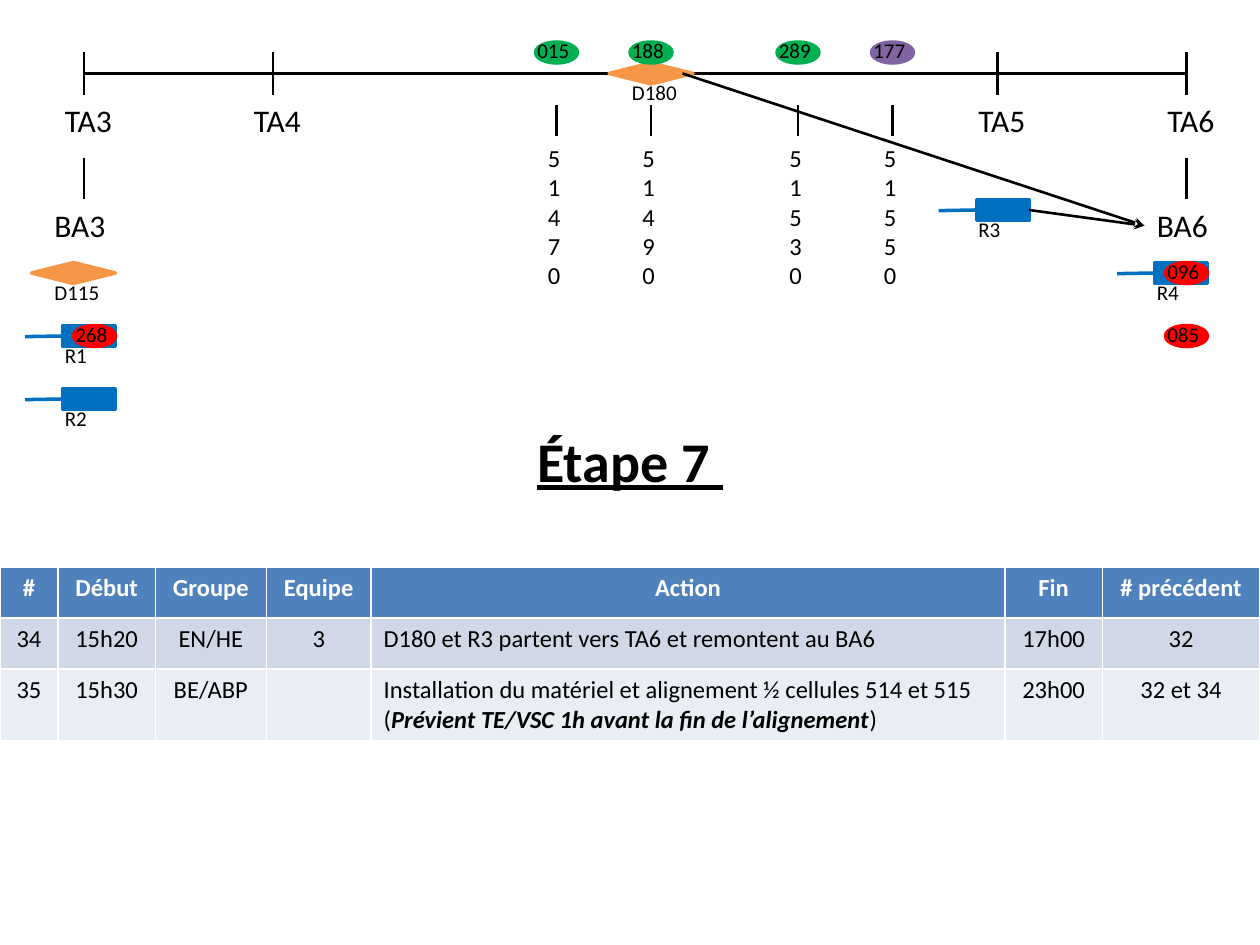
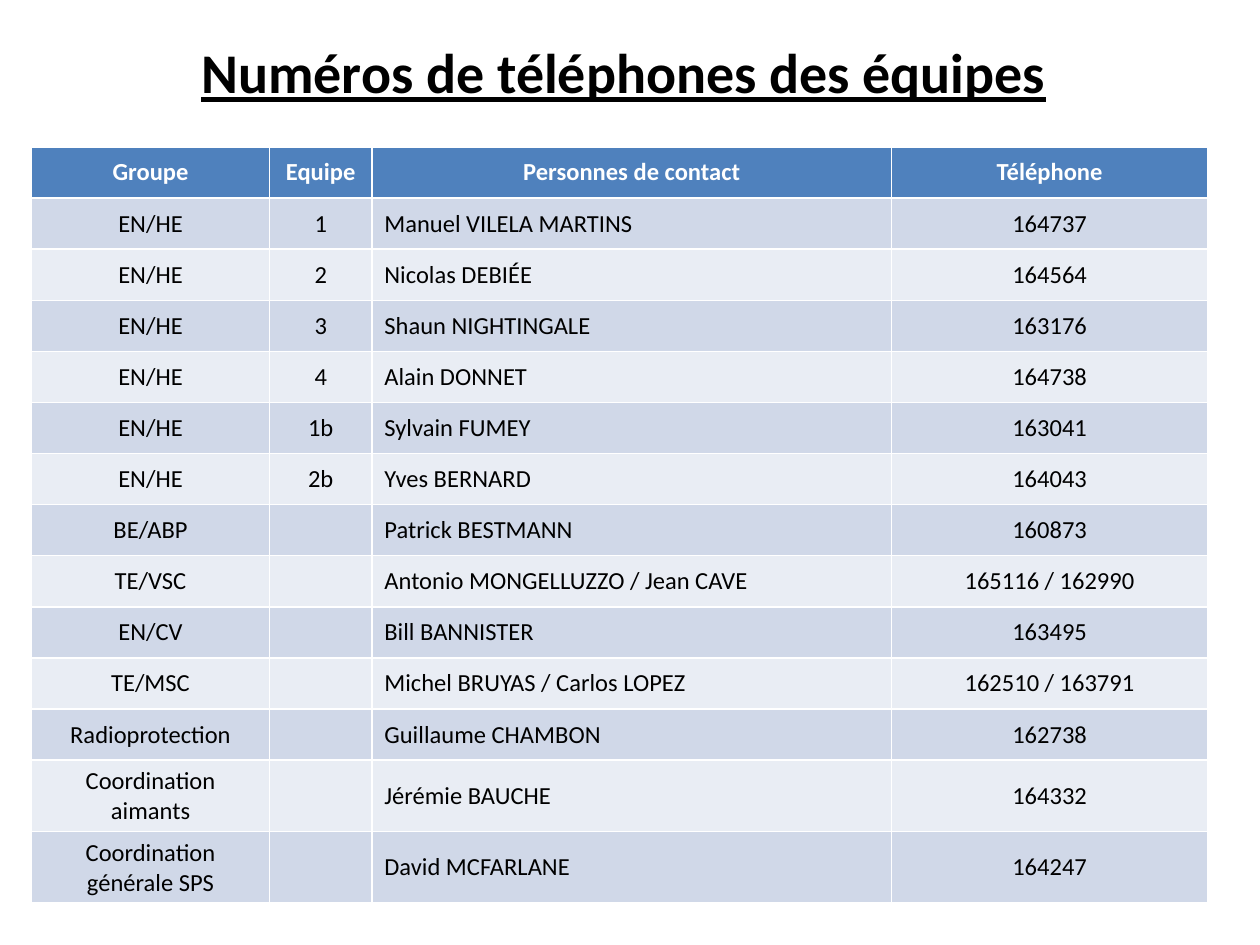
from lxml import etree
from pptx import Presentation
from pptx import util as u
from pptx.dml.color import RGBColor
from pptx.enum import shapes, text
from pptx.oxml.ns import qn

COLOURS = {
    "black": "000000", "white": "FFFFFF", "orange": "F79646", "blue": "0070C0",
    "green": "00B050", "purple": "8064A2", "red": "FF0000",
    "header": "4F81BD", "band": "D0D8E8", "pale": "E9EDF4",
}
HEIGHTS = {12: 0.77, 14: 3.25, 18: 1.03, 32: 1.63}
ROW_HEIGHT = 1.03
SHAPE = shapes.MSO_SHAPE


def write(para, words, size=14, colour="black", bold=False, italic=False, underline=False):
    span = para.add_run()
    span.text = words
    span.font.name = "Calibri"
    span.font.size = u.Pt(size)
    span.font.color.rgb = RGBColor.from_string(COLOURS[colour])
    span.font.bold = bold
    span.font.italic = italic
    span.font.underline = underline


def add_label(page, words, left, top, width, size=12, **style):
    box = page.shapes.add_textbox(left * unit, top * unit, width * unit, u.Cm(HEIGHTS[size]))
    box.text_frame.word_wrap = True
    box.text_frame.auto_size = text.MSO_AUTO_SIZE.SHAPE_TO_FIT_TEXT
    write(box.text_frame.paragraphs[0], words, size=size, **style)


deck = Presentation()
deck.slide_width = u.Cm(25.4)
deck.slide_height = u.Cm(19.05)
unit = u.Cm(25.4) // 120
step_page, phone_page = [deck.slides.add_slide(deck.slide_layouts[6]) for _ in range(2)]

stations = {"TA3": 8, "TA4": 26, "TA5": 95, "TA6": 113}
buildings = {"BA3": 8, "BA6": 113}
cells = {"51470": 53, "51490": 62, "51530": 76, "51550": 85}

lines = [(8, 7, 113, 7, False)]
lines += [(x, 5, x, 9, False) for x in stations.values()]
lines += [(x, 15, x, 19, False) for x in buildings.values()]
lines += [(x, 10, x, 13, False) for x in cells.values()]
arrows = [(65, 7, 109, 21.5, True), (98, 20, 109, 21.5, True)]

kinds = {
    "vehicle": (SHAPE.FLOWCHART_DECISION, 8),
    "trailer": (SHAPE.LINE_CALLOUT_1, 5),
    "magnet": (SHAPE.OVAL, 4),
}
markers = [
    ("vehicle", "D180", 58, 6, "orange"),
    ("vehicle", "D115", 3, 25, "orange"),
    ("trailer", "R1", 6, 31, "blue"),
    ("trailer", "R2", 6, 37, "blue"),
    ("trailer", "R3", 93, 19, "blue"),
    ("trailer", "R4", 110, 25, "blue"),
    ("magnet", "015", 51, 4, "green"),
    ("magnet", "188", 60, 4, "green"),
    ("magnet", "289", 74, 4, "green"),
    ("magnet", "177", 83, 4, "purple"),
    ("magnet", "268", 7, 31, "red"),
    ("magnet", "096", 111, 25, "red"),
    ("magnet", "085", 111, 31, "red"),
]


for group in (lines, markers, arrows):
    for item in group:
        if group is markers:
            kind, name, left, top, colour = item
            preset, width = kinds[kind]
            marker = step_page.shapes.add_shape(preset, left * unit, top * unit, width * unit, 2 * unit)
            marker.shadow.inherit = False
            marker.fill.solid()
            marker.fill.fore_color.rgb = RGBColor.from_string(COLOURS[colour])
            marker.line.color.rgb = RGBColor.from_string(COLOURS[colour])
            marker.line.width = u.Pt(2)
            if kind == "trailer":
                for index, value in enumerate((0.5, -0.01, 0.53, -0.72)):
                    marker.adjustments[index] = value
        else:
            *ends, pointed = item
            line = step_page.shapes.add_connector(
                shapes.MSO_CONNECTOR.STRAIGHT, *[int(end * unit) for end in ends])
            line.line.color.rgb = RGBColor.from_string(COLOURS["black"])
            line.line.width = u.Pt(1.5)
            properties = line.line._get_or_add_ln().getparent()
            if pointed:
                etree.SubElement(properties.find(qn("a:ln")), qn("a:tailEnd"), type="stealth")
            etree.SubElement(properties, qn("a:effectLst"))

for kind, name, left, top, colour in markers:
    if kind == "magnet":
        add_label(step_page, name, left - 1, top - 1, 6)
    elif kind == "trailer":
        add_label(step_page, name, left - 1, top + 1, 5)
    else:
        add_label(step_page, name, left + 1, top + 1, 8)
for name, x in stations.items():
    add_label(step_page, name, x - 3, 9, 8, size=18)
for name, x in buildings.items():
    add_label(step_page, name, x - 4, 19, 8, size=18)
for name, x in cells.items():
    add_label(step_page, name, x - 2, 13, 3, size=14)

add_label(step_page, "Étape 7 ", 50, 40, 27, size=32, bold=True, underline=True)
add_label(phone_page, "Numéros de téléphones des équipes", 18, 3, 84,
          size=32, bold=True, underline=True)

step_rows = [
    ("#", "Début", "Groupe", "Equipe", "Action", "Fin", "# précédent"),
    ("34", "15h20", "EN/HE", "3", "D180 et R3 partent vers TA6 et remontent au BA6", "17h00", "32"),
    ("35", "15h30", "BE/ABP", "",
     "Installation du matériel et alignement ½ cellules 514 et 515 "
     "(|Prévient TE/VSC 1h avant la fin de l’alignement|)", "23h00", "32 et 34"),
]
phone_rows = [
    ("Groupe", "Equipe", "Personnes de contact", "Téléphone"),
    ("EN/HE", "1", "Manuel VILELA MARTINS", "164737"),
    ("EN/HE", "2", "Nicolas DEBIÉE", "164564"),
    ("EN/HE", "3", "Shaun NIGHTINGALE", "163176"),
    ("EN/HE", "4", "Alain DONNET", "164738"),
    ("EN/HE", "1b", "Sylvain FUMEY", "163041"),
    ("EN/HE", "2b", "Yves BERNARD", "164043"),
    ("BE/ABP", "", "Patrick BESTMANN", "160873"),
    ("TE/VSC", "", "Antonio MONGELLUZZO / Jean CAVE", "165116 / 162990"),
    ("EN/CV", "", "Bill BANNISTER", "163495"),
    ("TE/MSC", "", "Michel BRUYAS / Carlos LOPEZ", "162510 / 163791"),
    ("Radioprotection", "", "Guillaume CHAMBON", "162738"),
    ("Coordination aimants", "", "Jérémie BAUCHE", "164332"),
    ("Coordination générale SPS", "", "David MCFARLANE", "164247"),
]
tables = [
    (step_page, step_rows, 0, 54, (1.17, 1.96, 2.24, 2.11, 12.78, 1.96, 3.18), 4, text.MSO_ANCHOR.TOP),
    (phone_page, phone_rows, 3, 14, (4.8, 2.06, 10.48, 6.37), 2, text.MSO_ANCHOR.MIDDLE),
]

for page, rows, left, top, widths, wide_column, anchor in tables:
    table = page.shapes.add_table(
        len(rows), len(widths), left * unit, top * unit,
        u.Cm(sum(widths)), u.Cm(ROW_HEIGHT * len(rows))).table
    for column, width in zip(table.columns, widths):
        column.width = u.Cm(width)
    for r, row in enumerate(rows):
        table.rows[r].height = u.Cm(ROW_HEIGHT)
        fill = "header" if r == 0 else "band" if r % 2 else "pale"
        for c, words in enumerate(row):
            cell = table.cell(r, c)
            cell.vertical_anchor = anchor
            cell.fill.solid()
            cell.fill.fore_color.rgb = RGBColor.from_string(COLOURS[fill])
            para = cell.text_frame.paragraphs[0]
            centred = r == 0 or c != wide_column
            para.alignment = text.PP_ALIGN.CENTER if centred else text.PP_ALIGN.LEFT
            for index, part in enumerate(words.split("|") if words else []):
                stressed = index == 1
                write(para, part, colour="black" if r else "white",
                      bold=r == 0 or stressed, italic=stressed)

deck.save("out.pptx")
